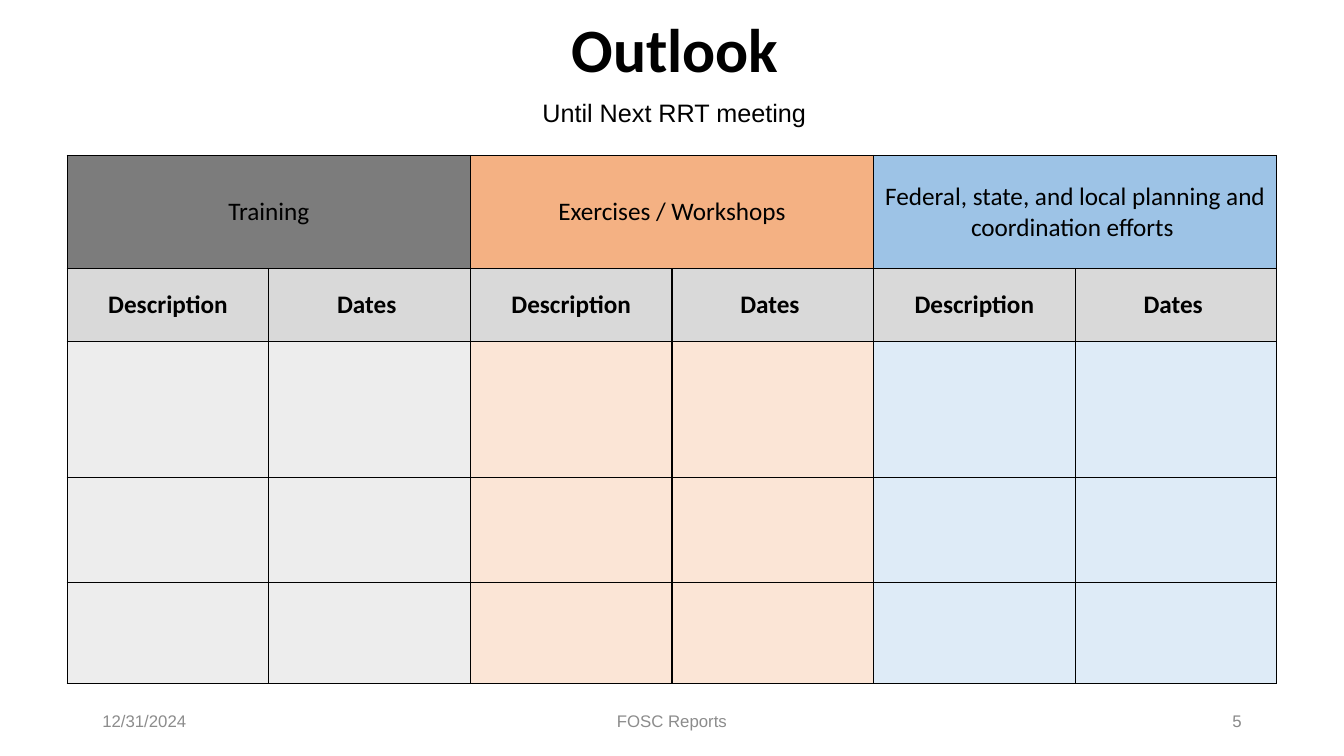
from lxml import etree
from pptx import Presentation
from pptx.dml.color import RGBColor
from pptx.enum import shapes, text
from pptx.oxml import parse_xml
from pptx.oxml.ns import nsdecls
from pptx.util import Pt

LEFT, MID, RIGHT = text.PP_ALIGN.LEFT, text.PP_ALIGN.CENTER, text.PP_ALIGN.RIGHT


def color(code):
    return RGBColor.from_string(code)


def write(frame, words, font="Arial", size=18, ink="000000", bold=False, align=MID, space=1.0):
    para = frame.paragraphs[0]
    para.alignment = align
    para.line_spacing = space
    run = para.add_run()
    run.text = words
    run.font.name = font
    run.font.size = Pt(size)
    run.font.bold = bold
    run.font.color.rgb = color(ink)


deck = Presentation()
deck.slide_width, deck.slide_height = Pt(960), Pt(540)
slide = deck.slides.add_slide(deck.slide_layouts[6])

# Footer and title
grey = dict(size=12, ink="8C8C8C")
boxes = [
    ("12/31/2024", (66, 500.5, 216, 28.8), dict(grey, align=LEFT)),
    ("FOSC Reports", (318, 500.5, 324, 28.8), grey),
    ("5", (678, 500.5, 216, 28.8), dict(grey, ink="898989", align=RIGHT)),
    ("Outlook", (50.4, -7.2, 864, 90), dict(font="Calibri", size=44, bold=True, space=0.9)),
]
for words, place, style in boxes:
    frame = slide.shapes.add_textbox(*map(Pt, place)).text_frame
    frame.word_wrap = True
    frame.vertical_anchor = text.MSO_ANCHOR.MIDDLE
    write(frame, words, **style)

# Table: each topic spans a description and a dates column
topics = [
    ("Training", "7C7C7C", "EDEDED"),
    ("Exercises / Workshops", "F4B183", "FBE5D6"),
    ("Federal, state, and local planning and coordination efforts ", "9DC3E6", "DEEBF7"),
]
heads = ["Description", "Dates "]
rows = [81, 52, 97, 75, 72]
table = slide.shapes.add_table(5, 6, Pt(48), Pt(111), Pt(864), Pt(sum(rows))).table
table.first_row = table.horz_banding = False
for row, high in zip(table.rows, rows):
    row.height = Pt(high)
for col in table.columns:
    col.width = Pt(144)

for r in range(5):
    for c in range(6):
        cell = table.cell(r, c)
        name, dark, light = topics[c // 2]
        cell.vertical_anchor = text.MSO_ANCHOR.MIDDLE
        cell.fill.solid()
        cell.fill.fore_color.rgb = color([dark, "D9D9D9", light, light, light][r])
        props = cell._tc.get_or_add_tcPr()
        for i, side in enumerate("LRTB"):
            props.insert(i, parse_xml(
                f'<a:ln{side} {nsdecls("a")} w="12700"><a:solidFill>'
                f'<a:srgbClr val="000000"/></a:solidFill></a:ln{side}>'))
        if r == 0 and c % 2 == 0:
            cell.merge(table.cell(0, c + 1))
            write(cell.text_frame, name, font="Calibri")
        elif r == 1:
            write(cell.text_frame, heads[c % 2], font="Calibri", bold=True)

# Subtitle
label = slide.shapes.add_shape(
    shapes.MSO_SHAPE.RECTANGLE, Pt(379.4), Pt(66.2), Pt(204.5), Pt(28.8))
label.shadow.inherit = False
label.fill.solid()
label.fill.fore_color.rgb = color("FFFFFF")
label.line.color.rgb = color("FFFFFF")
label.line.width = Pt(1)
label.text_frame.word_wrap = False
label.text_frame.vertical_anchor = text.MSO_ANCHOR.TOP
write(label.text_frame, "Until Next RRT meeting")

deck.save("out.pptx")
